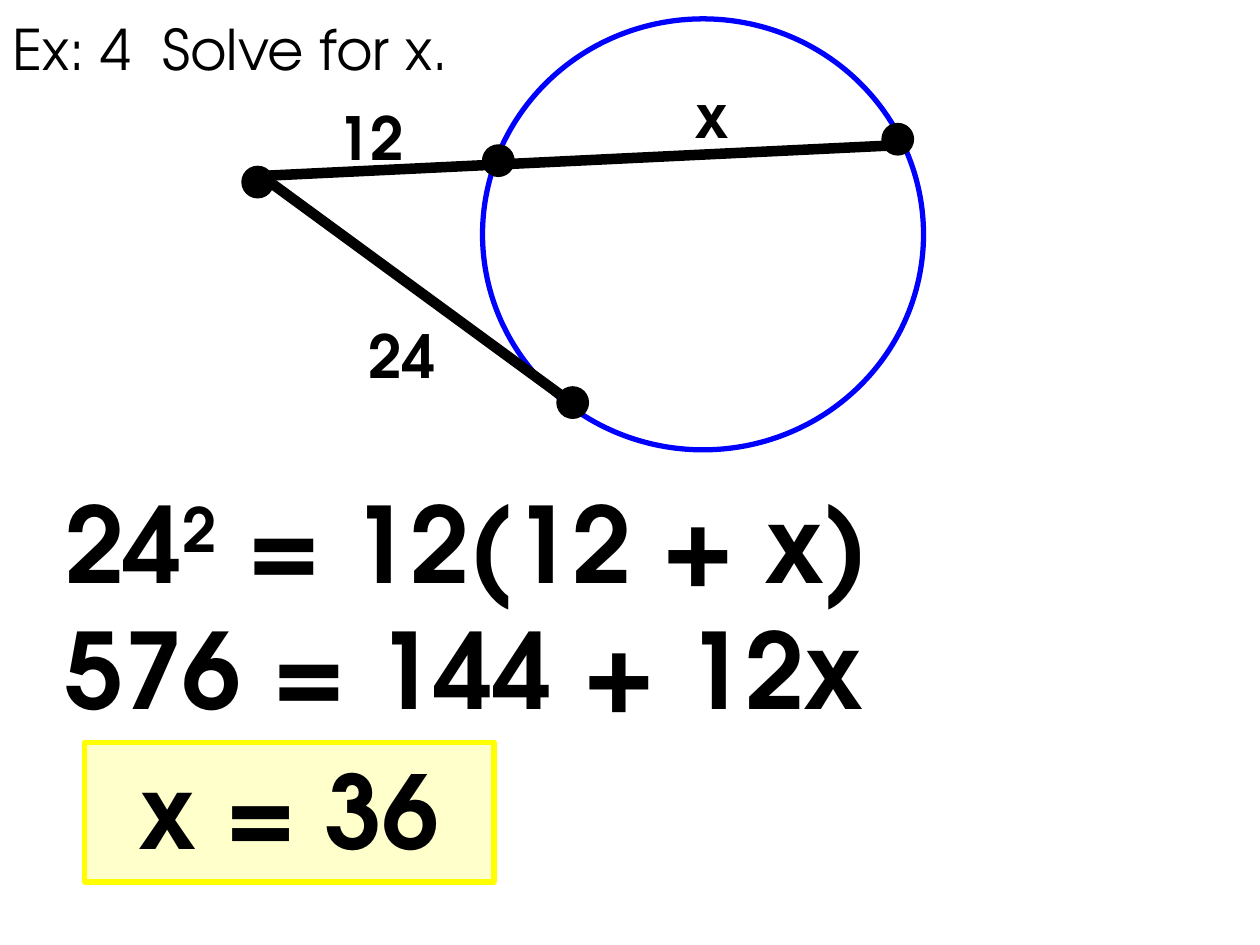
from pptx import Presentation
from pptx.dml.color import RGBColor
from pptx.enum.shapes import MSO_CONNECTOR, MSO_SHAPE
from pptx.enum.text import MSO_ANCHOR, MSO_AUTO_SIZE, PP_ALIGN
from pptx.util import Inches, Pt
from lxml import etree

BLACK = RGBColor(0x00, 0x00, 0x00)
BLUE = RGBColor(0x00, 0x00, 0xFF)
YELLOW = RGBColor(0xFF, 0xFF, 0x00)
PALE_YELLOW = RGBColor(0xFF, 0xFF, 0xCC)
FONT = "TeX Gyre Adventor"
DOT_SIZE = 0.25
DRAWING_NS = "http://schemas.openxmlformats.org/drawingml/2006/main"


def add_preset(preset, left, top, width, height, fill, line, line_width):
    shape = slide.shapes.add_shape(
        preset, Inches(left), Inches(top), Inches(width), Inches(height))
    shape.shadow.inherit = False
    if fill is None:
        shape.fill.background()
    else:
        shape.fill.solid()
        shape.fill.fore_color.rgb = fill
    shape.line.color.rgb = line
    shape.line.width = Pt(line_width)
    return shape


def write_text(shape, pieces, size, bold=True, align=PP_ALIGN.LEFT, anchor=MSO_ANCHOR.TOP):
    """Write one paragraph in the shape, one run for each piece."""
    frame = shape.text_frame
    frame.word_wrap = True
    frame.auto_size = MSO_AUTO_SIZE.SHAPE_TO_FIT_TEXT
    frame.vertical_anchor = anchor
    paragraph = frame.paragraphs[0]
    paragraph.alignment = align
    for piece in pieces:
        run = paragraph.add_run()
        run.text = piece
        run.font.name = FONT
        run.font.size = Pt(size)
        run.font.bold = bold
        run.font.color.rgb = BLACK
    return paragraph


presentation = Presentation()
presentation.slide_width = Inches(10)
presentation.slide_height = Inches(7.5)
slide = presentation.slides.add_slide(presentation.slide_layouts[6])

# Circle with its tangent and secant
add_preset(MSO_SHAPE.OVAL, 3.83, 0.15, 3.5, 3.42, None, BLUE, 3)

tangent = (2.08, 1.4, 4.58, 3.23)
secant = (2, 1.4, 7.17, 1.15)
for ends in (tangent, secant):
    segment = slide.shapes.add_connector(
        MSO_CONNECTOR.STRAIGHT, *[Inches(value) for value in ends])
    segment.line.color.rgb = BLACK
    segment.line.width = Pt(6)
    etree.SubElement(segment._element.spPr, f"{{{DRAWING_NS}}}effectLst")

for left, top in [(4.42, 3.07), (7, 0.98), (1.92, 1.32), (3.83, 1.15)]:
    add_preset(MSO_SHAPE.OVAL, left, top, DOT_SIZE, DOT_SIZE, BLACK, BLACK, 0.75)

for label, left, top in [("24", 2.83, 2.48), ("12", 2.58, 0.75), ("x", 5.42, 0.58)]:
    box = slide.shapes.add_textbox(Inches(left), Inches(top), Inches(1.17), Inches(0.67))
    write_text(box, [label], 34)

# Worked solution
box = slide.shapes.add_textbox(Inches(-0.17), Inches(3.75), Inches(7.75), Inches(1.11))
equation = write_text(box, ["24", "2", " = 12(12 + x)"], 60, align=PP_ALIGN.CENTER)
equation.runs[1].font._element.set("baseline", "30000")

box = slide.shapes.add_textbox(Inches(-0.08), Inches(4.75), Inches(7.53), Inches(1.11))
write_text(box, ["576 = 144 + 12x"], 60, align=PP_ALIGN.CENTER)

answer = add_preset(MSO_SHAPE.RECTANGLE, 0.67, 5.89, 3.25, 1.11, PALE_YELLOW, YELLOW, 3)
write_text(answer, ["x = 36"], 58, align=PP_ALIGN.CENTER)

# Heading
heading = slide.shapes.add_textbox(Inches(0), Inches(0.07), Inches(8.17), Inches(0.63))
write_text(heading, ["Ex: 4  Solve for x."], 32, bold=False, anchor=MSO_ANCHOR.BOTTOM)

presentation.save("out.pptx")
